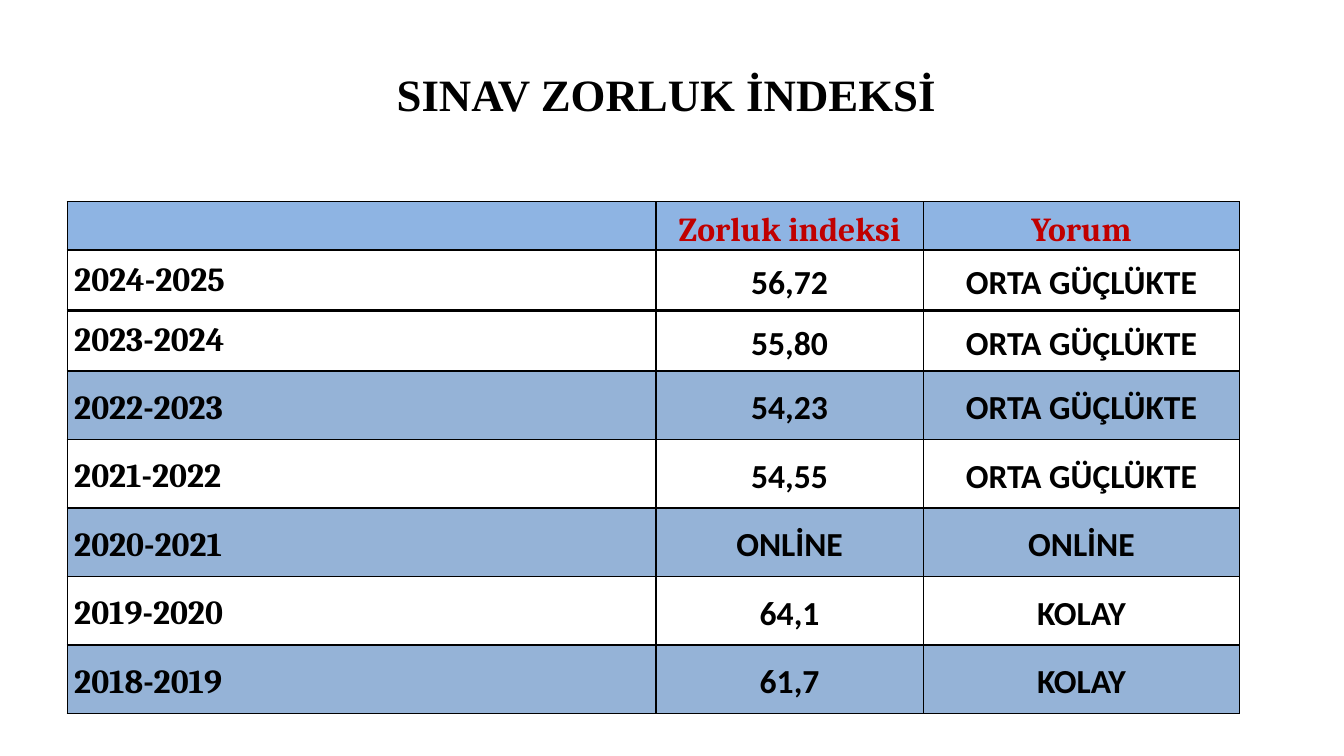
import pptx
import pptx.util
import pptx.dml.color
import pptx.enum.text
import pptx.oxml
import pptx.oxml.ns
from dataclasses import dataclass

Inches, Pt = pptx.util.Inches, pptx.util.Pt
ALIGN = pptx.enum.text.PP_ALIGN
ANCHOR = pptx.enum.text.MSO_ANCHOR


@dataclass(frozen=True)
class Theme:
    ink: str = "000000"
    accent: str = "C00000"
    header: str = "8EB4E3"
    band: str = "95B3D7"
    title_size: int = 32
    table_size: int = 24
    title_font: str = "Times New Roman"
    label_font: str = "Cambria"
    value_font: str = "Calibri"
    thin: float = 1
    thick: float = 2.25


theme = Theme()


def write_text(frame, text, *, font, size, color=theme.ink, align=ALIGN.CENTER, spacing=None):
    para = frame.paragraphs[0]
    para.alignment = align
    para.line_spacing = spacing
    span = para.add_run()
    span.text = text
    span.font.name = font
    span.font.size = Pt(size)
    span.font.bold = True
    span.font.color.rgb = pptx.dml.color.RGBColor.from_string(color)


def set_borders(cell, top, bottom):
    """Give the cell thin sides and the given top and bottom widths in points."""
    properties = cell._tc.get_or_add_tcPr()
    widths = {"lnL": theme.thin, "lnR": theme.thin, "lnT": top, "lnB": bottom}
    for place, (side, width) in enumerate(widths.items()):
        line = pptx.oxml.parse_xml(
            f'<a:{side} {pptx.oxml.ns.nsdecls("a")} w="{Pt(width)}">'
            f'<a:solidFill><a:srgbClr val="{theme.ink}"/></a:solidFill></a:{side}>')
        properties.insert(place, line)


deck = pptx.Presentation()
deck.slide_width, deck.slide_height = Inches(13.33), Inches(7.5)
page = deck.slides.add_slide(deck.slide_layouts[6])

left, table_top = deck.slide_width * 0.05, Inches(2)
title = page.shapes.add_textbox(int(left), Inches(0.3), int(deck.slide_width * 0.9), Inches(1.25))
title.text_frame.word_wrap = True
title.text_frame.vertical_anchor = ANCHOR.MIDDLE
write_text(title.text_frame, "SINAV ZORLUK İNDEKSİ ", font=theme.title_font, size=theme.title_size)

rows = [
    ("", "Zorluk indeksi", "Yorum"),
    ("2024-2025", "56,72", "ORTA GÜÇLÜKTE"),
    ("2023-2024", "55,80", "ORTA GÜÇLÜKTE"),
    ("2022-2023", "54,23", "ORTA GÜÇLÜKTE"),
    ("2021-2022", "54,55", "ORTA GÜÇLÜKTE"),
    ("2020-2021", "ONLİNE", "ONLİNE"),
    ("2019-2020", "64,1", "KOLAY"),
    ("2018-2019", "61,7", "KOLAY"),
]
column_widths = [5.84, 2.65, 3.14]
row_heights = [0.48] + [0.6] * 2 + [0.68] * 5
banded_rows = range(3, len(rows), 2)
thick_rules = (1, 2)  # rules counted from the top edge of the table

table = page.shapes.add_table(
    len(rows), len(column_widths), int(left), table_top,
    Inches(sum(column_widths)), Inches(sum(row_heights))).table
for column, width in zip(table.columns, column_widths):
    column.width = Inches(width)

for r, (row, height) in enumerate(zip(rows, row_heights)):
    table.rows[r].height = Inches(height)
    top, bottom = (theme.thick if rule in thick_rules else theme.thin for rule in (r, r + 1))
    fill = theme.header if r == 0 else theme.band if r in banded_rows else None
    for c, text in enumerate(row):
        cell = table.cell(r, c)
        cell.margin_left = cell.margin_right = Inches(0.07)
        cell.margin_top = cell.margin_bottom = 0
        cell.vertical_anchor = ANCHOR.BOTTOM if r == 0 else ANCHOR.MIDDLE
        if fill:
            cell.fill.solid()
            cell.fill.fore_color.rgb = pptx.dml.color.RGBColor.from_string(fill)
        else:
            cell.fill.background()
        set_borders(cell, top, bottom)
        if text:
            write_text(
                cell.text_frame, text, size=theme.table_size,
                font=theme.label_font if r == 0 or c == 0 else theme.value_font,
                color=theme.accent if r == 0 else theme.ink,
                align=ALIGN.LEFT if c == 0 else ALIGN.CENTER,
                spacing=None if c == 0 and r in (1, 2) else 1.15)

deck.save("out.pptx")
